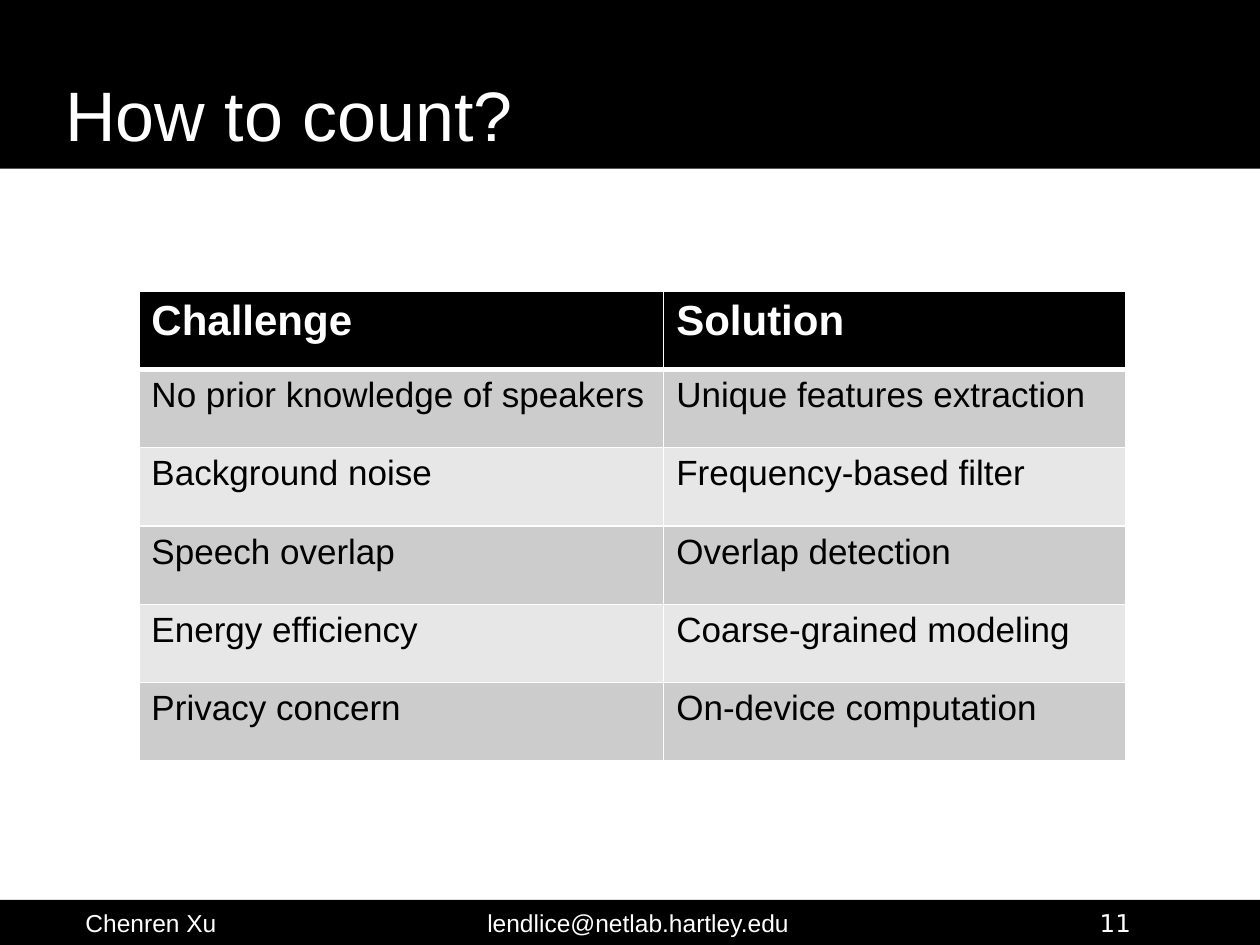
from lxml.etree import SubElement
from pptx import Presentation
from pptx.dml.color import RGBColor
from pptx.enum.shapes import MSO_SHAPE
from pptx.enum.text import MSO_ANCHOR, PP_ALIGN
from pptx.oxml.ns import qn
from pptx.util import Cm, Pt

WIDTH, HEIGHT = 25.4, 19.05
BLACK, WHITE = "000000", "FFFFFF"
BAND_FILLS = ("CCCCCC", "E7E7E7")
HEADER_FONT = {"name": "Arial", "size": Pt(24), "bold": True}
BODY_FONT = {"name": "Arial", "size": Pt(20), "bold": False}
TITLE_FONT = {"name": "Arial", "size": Pt(40)}
FOOTER_FONT = {"name": "Arial", "size": Pt(14)}
NUMBER_FONT = {"name": "DejaVu Sans", "size": Pt(14)}
ROWS = (
    ("Challenge", "Solution"),
    ("No prior knowledge of speakers", "Unique features extraction"),
    ("Background noise", "Frequency-based filter"),
    ("Speech overlap", "Overlap detection"),
    ("Energy efficiency", "Coarse-grained modeling"),
    ("Privacy concern", "On-device computation"),
)


def paint(color_format, color):
    """Set a colour from a hex string."""
    color_format.rgb = RGBColor.from_string(color)


def fill_solid(target, color):
    """Fill a shape or cell with one colour."""
    target.fill.solid()
    paint(target.fill.fore_color, color)


def write(text_frame, text, font_format, color, alignment=PP_ALIGN.LEFT):
    """Write one formatted line into a text frame."""
    paragraph = text_frame.paragraphs[0]
    paragraph.alignment = alignment
    run = paragraph.add_run()
    run.text = text
    for attribute, value in font_format.items():
        setattr(run.font, attribute, value)
    paint(run.font.color, color)


def add_bar(slide, left, top, width, height):
    """Draw a black bar without outline or shadow."""
    bar = slide.shapes.add_shape(
        MSO_SHAPE.RECTANGLE, Cm(left), Cm(top), Cm(width), Cm(height))
    bar.shadow.inherit = False
    fill_solid(bar, BLACK)
    bar.line.fill.background()


def add_label(slide, box, text, font_format, alignment=PP_ALIGN.LEFT,
              anchor=MSO_ANCHOR.TOP):
    """Add a white text label in the given box."""
    label = slide.shapes.add_textbox(*(Cm(length) for length in box))
    text_frame = label.text_frame
    text_frame.word_wrap = True
    text_frame.vertical_anchor = anchor
    write(text_frame, text, font_format, WHITE, alignment)


def add_header(slide, left, top, width, height):
    """Place the title on its bar."""
    add_bar(slide, left, top, width, height)
    title_box = (left + 1.07, top + 1.17, width - 2.18, height - 1.3)
    add_label(slide, title_box, "How to count?", TITLE_FONT,
              anchor=MSO_ANCHOR.BOTTOM)


def add_footer(slide, left, top, width, height):
    """Place author, address and page number on the bottom bar."""
    add_bar(slide, left, top, width, height)
    labels = (
        (1.09, 3.91, "Chenren Xu", FOOTER_FONT, PP_ALIGN.CENTER),
        (8.56, 8.61, "lendlice@netlab.hartley.edu", FOOTER_FONT,
         PP_ALIGN.CENTER),
        (21.92, 2.44, "11", NUMBER_FONT, PP_ALIGN.LEFT),
    )
    for offset, label_width, text, font_format, alignment in labels:
        box = (left + offset, top + 0.03, label_width, 0.76)
        add_label(slide, box, text, font_format, alignment)


def set_borders(cell, top_width, bottom_width):
    """Give a cell white borders, with 1 pt at the sides."""
    properties = cell._tc.get_or_add_tcPr()
    widths = {"a:lnL": 1, "a:lnR": 1, "a:lnT": top_width,
              "a:lnB": bottom_width}
    for position, (tag, points) in enumerate(widths.items()):
        line = SubElement(properties, qn(tag), w=str(Pt(points)))
        fill = SubElement(line, qn("a:solidFill"))
        SubElement(fill, qn("a:srgbClr"), val=WHITE)
        properties.insert(position, line)


def add_challenge_table(slide, left, top, width, height):
    """Build the banded table of challenges and solutions."""
    table = slide.shapes.add_table(
        len(ROWS), 2, Cm(left), Cm(top), Cm(width), Cm(height)).table
    first_width = 10.58
    table.columns[0].width = Cm(first_width)
    table.columns[1].width = Cm(width - first_width)
    for row_index, texts in enumerate(ROWS):
        is_header = row_index == 0
        table.rows[row_index].height = Cm(height / len(ROWS))
        fill = BLACK if is_header else BAND_FILLS[(row_index - 1) % 2]
        font_format = HEADER_FONT if is_header else BODY_FONT
        for column_index, text in enumerate(texts):
            cell = table.cell(row_index, column_index)
            fill_solid(cell, fill)
            write(cell.text_frame, text, font_format,
                  WHITE if is_header else BLACK)
            set_borders(cell, 3 if row_index == 1 else 1,
                        3 if is_header else 1)


def main():
    """Build and save the presentation."""
    presentation = Presentation()
    presentation.slide_width = Cm(WIDTH)
    presentation.slide_height = Cm(HEIGHT)
    slide = presentation.slides.add_slide(presentation.slide_layouts[6])
    fill_solid(slide.background, WHITE)
    add_header(slide, 0, 0, WIDTH, 3.4)
    add_footer(slide, 0, 18.14, WIDTH, HEIGHT - 18.14)
    add_challenge_table(slide, 2.8, 5.87, 19.89, 9.47)
    presentation.save("out.pptx")


if __name__ == "__main__":
    main()
